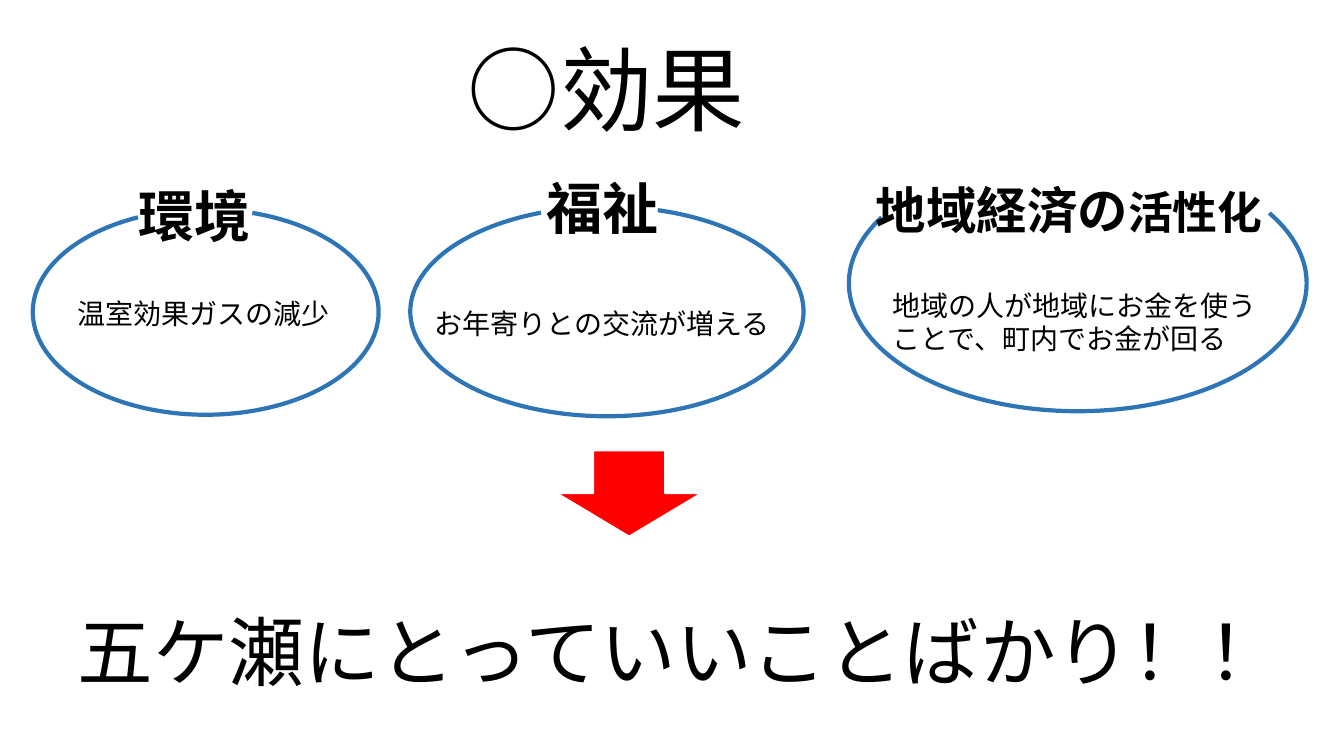
"""Build the slide on the three benefits for the town and their conclusion."""
import pptx
import pptx.dml.color
import pptx.enum.shapes
import pptx.enum.text
import pptx.oxml
import pptx.oxml.ns
import pptx.util
from pptx.util import Inches, Pt

FONT = "Noto Sans CJK JP"
BLACK = pptx.dml.color.RGBColor(0x00, 0x00, 0x00)
WHITE = pptx.dml.color.RGBColor(0xFF, 0xFF, 0xFF)
RED = pptx.dml.color.RGBColor(0xFF, 0x00, 0x00)
BLUE = pptx.dml.color.RGBColor(0x2E, 0x75, 0xB6)

ARROW_BOX = (5.53, 4.47, 1.42, 0.85)

# box, rotation, start and end angle in degrees
RINGS = [
    ((8.42, 1.54, 4.54, 2.54), 0, 339.88, 198.58),
    ((4.07, 2.05, 3.9, 2.08), 0, 296.67, 236.27),
    ((1.02, 1.38, 2.04, 3.43), 90, 205.19, 144.41),
]

# box, bold, runs of (text, size)
TEXTS = [
    ((4.54, 0.27, 9.76, 1.21), False, [("○効果", 66)]),
    ((1.28, 1.75, 1.52, 0.77), True, [("環境", 40)]),
    ((0.67, 2.89, 2.72, 0.44), False, [("温室効果ガスの減少", 20)]),
    ((5.32, 1.67, 2.49, 0.77), True, [("福祉", 40)]),
    ((4.21, 2.99, 3.9, 0.44), False, [("お年寄りとの交流が増える", 20)]),
    ((8.59, 1.73, 4.36, 0.71), True, [("地域経済の", 36), ("活性化", 32)]),
    ((8.75, 2.81, 3.97, 0.77), False, [("地域の人が地域にお金を使うことで、町内でお金が回る", 20)]),
    ((0.67, 5.95, 12.63, 1.01), False, [("五ケ瀬にとっていいことばかり！！", 54)]),
]


def add_shape(slide, kind, box, line_color, line_width):
    shape = slide.shapes.add_shape(kind, *map(Inches, box))
    shape.shadow.inherit = False
    shape.line.color.rgb = line_color
    shape.line.width = Pt(line_width)
    return shape


def add_ring(slide, box, rotation, start, end):
    ring = add_shape(slide, pptx.enum.shapes.MSO_SHAPE.ARC, box, BLUE, 3)
    ring.fill.background()
    ring.rotation = rotation
    for index, degrees in enumerate((start, end)):
        ring.adjustments[index] = degrees * 0.6


def add_text(slide, box, bold, runs):
    frame = slide.shapes.add_textbox(*map(Inches, box)).text_frame
    frame.word_wrap = True
    frame.auto_size = pptx.enum.text.MSO_AUTO_SIZE.SHAPE_TO_FIT_TEXT
    paragraph = frame.paragraphs[0]
    font = paragraph.font
    font.name = FONT
    font.bold = bold
    font.size = Pt(runs[0][1])
    font.color.rgb = BLACK
    for text, size in runs:
        run = paragraph.add_run()
        run.text = text
        if len(runs) > 1:
            run.font.size = Pt(size)
    for properties in paragraph._p.xpath("a:pPr/a:defRPr"):
        east_asian = pptx.oxml.parse_xml(f'<a:ea {pptx.oxml.ns.nsdecls("a")} typeface="{FONT}"/>')
        properties.append(east_asian)


def main():
    presentation = pptx.Presentation()
    presentation.slide_width = Inches(13.33)
    presentation.slide_height = Inches(7.5)
    slide = presentation.slides.add_slide(presentation.slide_layouts[6])
    arrow = add_shape(slide, pptx.enum.shapes.MSO_SHAPE.DOWN_ARROW, ARROW_BOX, WHITE, 1)
    arrow.fill.solid()
    arrow.fill.fore_color.rgb = RED
    for ring in RINGS:
        add_ring(slide, *ring)
    for text in TEXTS:
        add_text(slide, *text)
    presentation.save("out.pptx")


if __name__ == "__main__":
    main()
